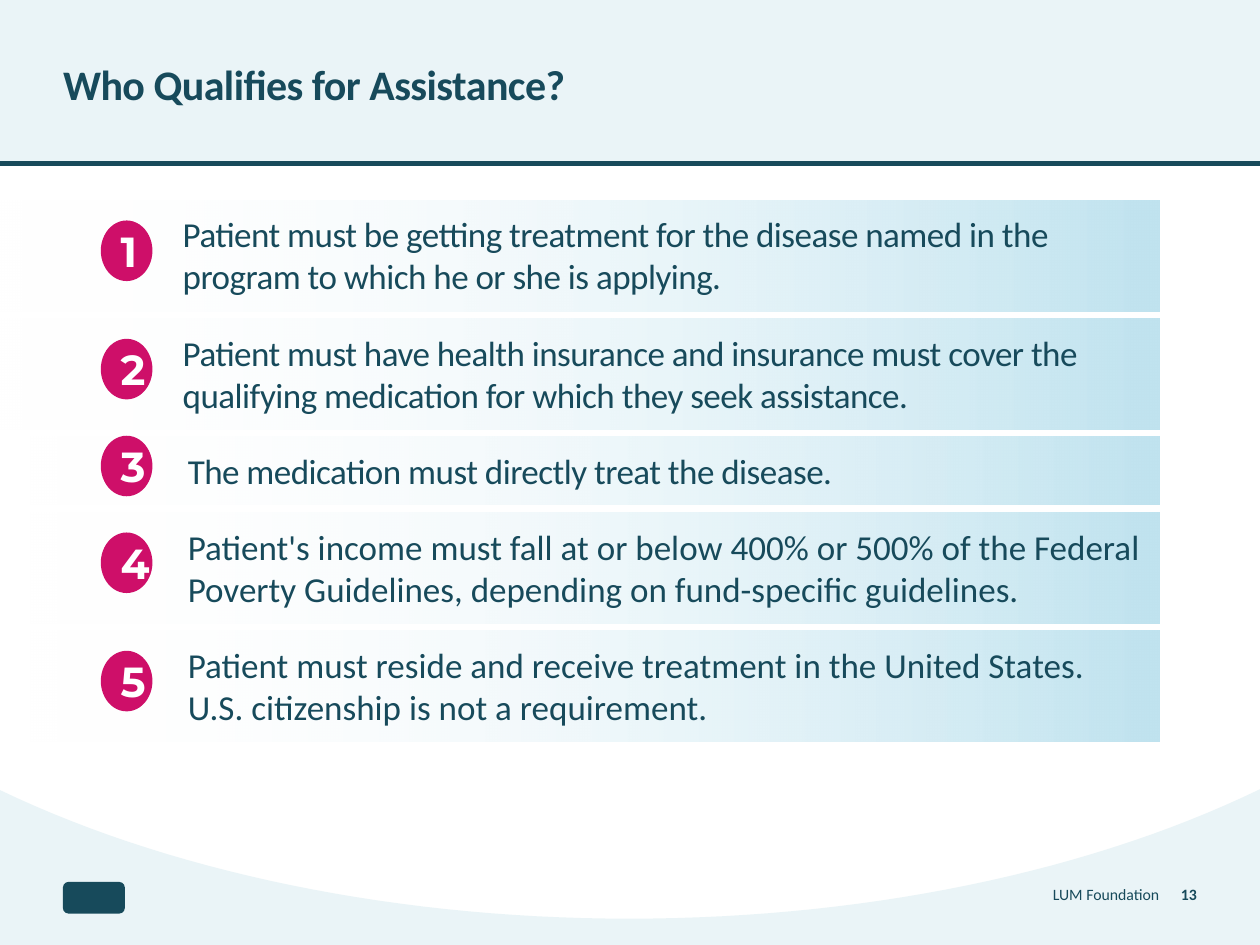
from lxml.etree import SubElement
from pptx import Presentation
from pptx.dml.color import RGBColor
from pptx.enum.shapes import MSO_CONNECTOR, MSO_SHAPE
from pptx.enum.text import MSO_ANCHOR, MSO_AUTO_SIZE, PP_ALIGN
from pptx.oxml.ns import qn
from pptx.util import Pt

TEAL = RGBColor(0x17, 0x4A, 0x5B)
PALE = RGBColor(0xBB, 0xDD, 0xE6)
SKY = RGBColor(0xC0, 0xE3, 0xEF)
PINK = RGBColor(0xCE, 0x0F, 0x69)
WHITE = RGBColor(0xFF, 0xFF, 0xFF)

WIDTH, HEIGHT = 720, 540
HEADER_HEIGHT = 93.6
BAR_RIGHT, BAR_GAP, TEXT_LEFT_INSET = 662.4, 4.2, 93.6
TALL, SHORT = 63.4, 38.9
BADGE_LEFT, BADGE_WIDTH, BADGE_HEIGHT = 57.6, 29.5, 34.6

# Left edge, height, extra indent, badge offset, letter spacing, text
CRITERIA = [
    (-7.9, TALL, 18.7, 11.5, -0.3, "Patient must be getting treatment for the disease "
     "named in the program to which he or she is applying."),
    (-7.9, TALL, 18.7, 11.5, -0.3, "Patient must have health insurance and insurance must "
     "cover the qualifying medication for which they seek assistance."),
    (13.7, SHORT, 0, -0.7, -0.3, "The medication must directly treat the disease."),
    (13.7, TALL, 0, 11.5, 0, "Patient's income must fall at or below 400% or 500% of the "
     "Federal Poverty Guidelines, depending on fund-specific guidelines."),
    (13.7, TALL, 0, 11.5, 0, "Patient must reside and receive treatment in the United "
     "States. U.S. citizenship is not a requirement."),
]


def curve(start, control_1, control_2, end, steps=30):
    """Points along a cubic curve, after its start."""
    points = []
    for step in range(1, steps + 1):
        t = step / steps
        weights = ((1 - t) ** 3, 3 * t * (1 - t) ** 2, 3 * t * t * (1 - t), t ** 3)
        corners = (start, control_1, control_2, end)
        points.append(tuple(sum(w * c[axis] for w, c in zip(weights, corners))
                            for axis in (0, 1)))
    return points


class SlideBuilder:
    def __init__(self, page):
        self.page = page
        self.shapes = page.shapes
        self.text_style = {"name": "Calibri", "size": Pt(20), "bold": False}

    def set_alpha(self, color_element, percent):
        SubElement(color_element, qn("a:alpha")).set("val", str(percent * 1000))

    def fill_text(self, box, text, align=PP_ALIGN.LEFT, anchor=MSO_ANCHOR.TOP,
                  insets=(0, 0, 0, 0), color=TEAL, tracking=0, line_height=None, **style):
        frame = box.text_frame
        sides = ("margin_left", "margin_top", "margin_right", "margin_bottom")
        layout = dict(zip(sides, map(Pt, insets)), word_wrap=True,
                      auto_size=MSO_AUTO_SIZE.NONE, vertical_anchor=anchor)
        for name, value in layout.items():
            setattr(frame, name, value)
        para = frame.paragraphs[0]
        para.alignment = align
        if line_height:
            para.line_spacing = Pt(line_height)
        span = para.add_run()
        span.text = text
        for name, value in {**self.text_style, **style}.items():
            setattr(span.font, name, value)
        span.font.color.rgb = color
        if tracking:
            span.font._element.set("spc", str(round(tracking * 100)))

    def paint(self, shape, color, alpha=None):
        shape.shadow.inherit = False
        shape.line.fill.background()
        shape.fill.solid()
        shape.fill.fore_color.rgb = color
        if alpha is not None:
            self.set_alpha(shape._element.spPr.find(".//" + qn("a:srgbClr")), alpha)

    def shape(self, kind, left, top, width, height, color, alpha=None):
        shape = self.shapes.add_shape(kind, Pt(left), Pt(top), Pt(width), Pt(height))
        self.paint(shape, color, alpha)
        return shape

    def outline(self, points, color, alpha):
        start, *rest = [(Pt(x), Pt(y)) for x, y in points]
        builder = self.shapes.build_freeform(*start, scale=1.0)
        builder.add_line_segments(rest, close=True)
        self.paint(builder.convert_to_shape(), color, alpha)

    def rule(self, top, color, width):
        line = self.shapes.add_connector(MSO_CONNECTOR.STRAIGHT, 0, Pt(top), Pt(WIDTH), Pt(top))
        line.line.color.rgb = color
        line.line.width = Pt(width)
        SubElement(line._element.spPr, qn("a:effectLst"))

    def title(self, text, left, top, width, height):
        box = self.shapes.title
        box.left, box.top, box.width, box.height = map(Pt, (left, top, width, height))
        self.shapes._spTree.append(box._element)  # in front of the header band
        self.fill_text(box, text, size=Pt(24), bold=True, tracking=-0.3, line_height=26)

    def label(self, text, left, width, bold=False):
        box = self.shapes.add_textbox(Pt(left), Pt(507.6), Pt(width), Pt(12.2))
        self.fill_text(box, text, PP_ALIGN.RIGHT, size=Pt(9), bold=bold, line_height=9)

    def bar(self, text, left, top, height, indent, tracking):
        bar = self.shape(MSO_SHAPE.RECTANGLE, left, top, BAR_RIGHT - left, height, SKY)
        bar.fill.gradient()
        bar.fill.gradient_angle = 0
        for stop, color in zip(bar.fill.gradient_stops, (WHITE, SKY)):
            stop.color.rgb = color
        self.set_alpha(bar._element.spPr.find(".//" + qn("a:srgbClr")), 0)
        self.fill_text(bar, text, insets=(TEXT_LEFT_INSET + indent, 7.2, 7.2, 7.2),
                       tracking=tracking)

    def badge(self, number, top):
        badge = self.shape(MSO_SHAPE.OVAL, BADGE_LEFT, top, BADGE_WIDTH, BADGE_HEIGHT, PINK)
        self.fill_text(badge, str(number), PP_ALIGN.CENTER, MSO_ANCHOR.MIDDLE,
                       (7.2, 3.6, 7.2, 3.6), WHITE, name="Montserrat", size=Pt(24), bold=True)


def main():
    deck = Presentation()
    deck.slide_width, deck.slide_height = Pt(WIDTH), Pt(HEIGHT)
    slide = SlideBuilder(deck.slides.add_slide(deck.slide_layouts[5]))

    # Curved footer and header band
    right, bottom, left = (WIDTH, 451), (359.5, 525), (0, 451.5)
    arc = [right,
           *curve(right, (622, 498.5), (494, 525), bottom),
           *curve(bottom, (226, 525), (98, 498.5), left)]
    slide.outline([*arc, (0, HEIGHT), (WIDTH, HEIGHT)], PALE, 30)
    slide.shape(MSO_SHAPE.RECTANGLE, 0, 0, WIDTH, HEADER_HEIGHT, PALE, 30)
    slide.rule(HEADER_HEIGHT, TEAL, 3)
    slide.title("Who Qualifies for Assistance?", 36, 36, 648, 57.6)

    # Footer: plain emblem, organisation and page number
    slide.shape(MSO_SHAPE.ROUNDED_RECTANGLE, 36, 504, 35.3, 18, TEAL)
    slide.label("LUM Foundation", 518.4, 144)
    slide.label("13", 662.4, 21.6, bold=True)

    # Numbered criteria
    top = 114.5
    for number, (left, height, indent, offset, tracking, text) in enumerate(CRITERIA, 1):
        slide.bar(text, left, top, height, indent, tracking)
        slide.badge(number, top + offset)
        top += height + BAR_GAP

    deck.save("out.pptx")


if __name__ == "__main__":
    main()
